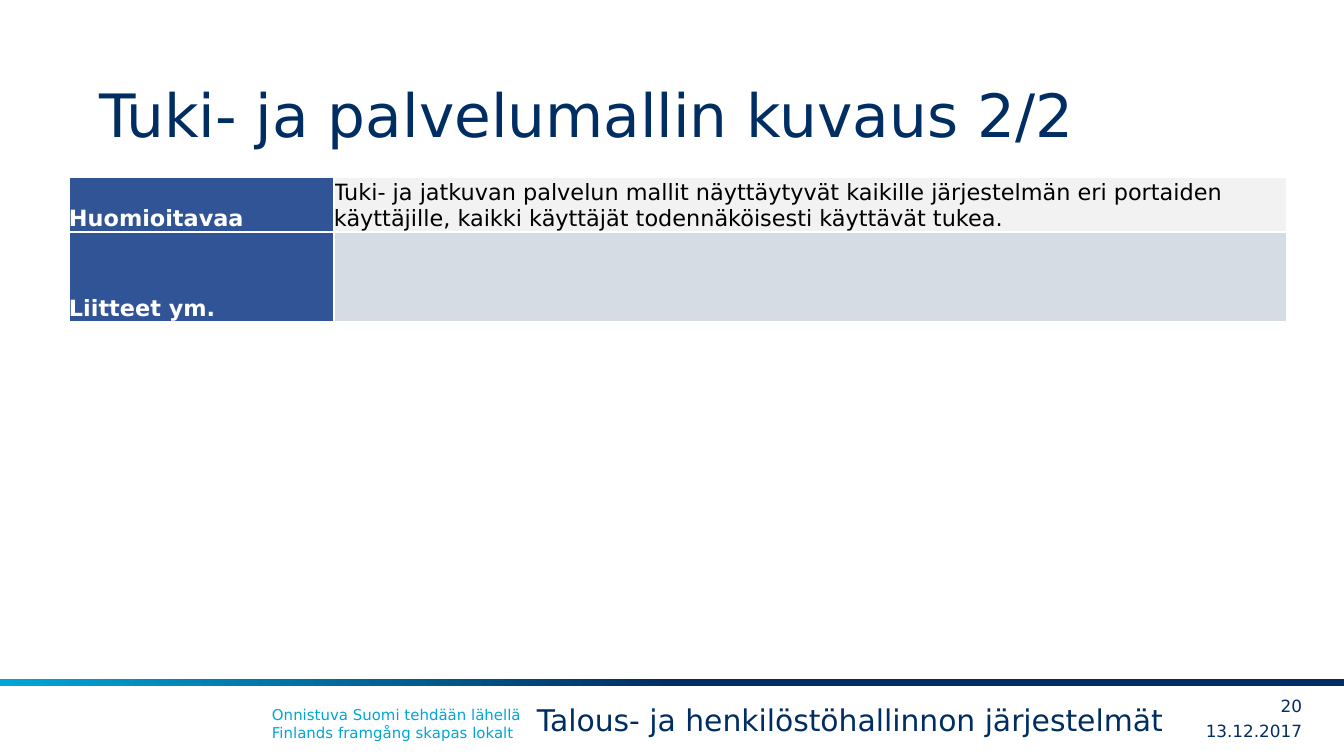
import dataclasses

import lxml.etree
import pptx
import pptx.dml.color
import pptx.enum.shapes
import pptx.enum.text
import pptx.oxml.ns
import pptx.util

EMU_PER_PX = 914400 / 134.4
ANCHOR = pptx.enum.text.MSO_ANCHOR
ALIGN = pptx.enum.text.PP_ALIGN


@dataclasses.dataclass(frozen=True)
class Theme:
    font: str = "DejaVu Sans"
    navy: str = "002E63"
    cyan: str = "00A6D6"
    white: str = "FFFFFF"
    black: str = "000000"
    header_fill: str = "305496"
    row_fills: tuple = ("F2F2F2", "D6DCE4")
    title_size: int = 32
    footer_size: int = 16
    table_size: int = 12
    date_size: int = 9
    tagline_size: int = 8
    border_width: float = 1.5


def px(length):
    return pptx.util.Emu(round(length * EMU_PER_PX))


def rgb(value):
    return pptx.dml.color.RGBColor.from_string(value)


def write_text(frame, text, *, font, size, color, bold=False, align=ALIGN.LEFT):
    paragraph = frame.paragraphs[0]
    paragraph.text = text
    paragraph.alignment = align
    for run in paragraph.runs:
        run.font.name = font
        run.font.size = pptx.util.Pt(size)
        run.font.bold = bold
        run.font.color.rgb = rgb(color)


class SlideBuilder:
    """Draws styled elements on the current slide, with lengths in px."""

    def __init__(self, presentation, theme):
        self.theme = theme
        self.slide = presentation.slides.add_slide(presentation.slide_layouts[5])

    def frame(self, frame, text, size, color, anchor, insets, align=ALIGN.LEFT):
        frame.word_wrap = True
        frame.auto_size = pptx.enum.text.MSO_AUTO_SIZE.NONE
        frame.vertical_anchor = anchor
        frame.margin_left = frame.margin_right = px(insets[0])
        frame.margin_top = frame.margin_bottom = px(insets[1])
        write_text(frame, text, font=self.theme.font, size=size, color=color, align=align)

    def title(self, text, left, top, width, height):
        shape = self.slide.shapes.title
        shape.left, shape.top, shape.width, shape.height = map(px, (left, top, width, height))
        self.frame(shape.text_frame, text, self.theme.title_size, self.theme.navy,
                   ANCHOR.BOTTOM, (0, 7))

    def text(self, text, left, top, width, height, size, color,
             anchor=ANCHOR.TOP, insets=(13, 7), align=ALIGN.LEFT):
        shape = self.slide.shapes.add_textbox(*map(px, (left, top, width, height)))
        self.frame(shape.text_frame, text, size, color, anchor, insets, align)

    def gradient_bar(self, left, top, width, height):
        shape = self.slide.shapes.add_shape(
            pptx.enum.shapes.MSO_SHAPE.RECTANGLE, *map(px, (left, top, width, height)))
        shape.shadow.inherit = False
        shape.line.fill.background()
        shape.fill.gradient()
        shape.fill.gradient_angle = 180
        stops = ((0.5, self.theme.navy), (1, self.theme.cyan))
        for stop, (position, color) in zip(shape.fill.gradient_stops, stops):
            stop.position = position
            stop.color.rgb = rgb(color)

    def cell(self, cell, text, fill, color, bold):
        qn = pptx.oxml.ns.qn
        properties = cell._tc.get_or_add_tcPr()
        for side in ("lnL", "lnR", "lnT", "lnB"):
            line = lxml.etree.SubElement(properties, qn(f"a:{side}"),
                                         w=str(pptx.util.Pt(self.theme.border_width)))
            solid = lxml.etree.SubElement(line, qn("a:solidFill"))
            lxml.etree.SubElement(solid, qn("a:srgbClr"), val=self.theme.white)
        cell.fill.solid()
        cell.fill.fore_color.rgb = rgb(fill)
        cell.margin_left = cell.margin_right = cell.margin_top = cell.margin_bottom = 0
        cell.vertical_anchor = ANCHOR.BOTTOM
        if text:
            write_text(cell.text_frame, text, font=self.theme.font,
                       size=self.theme.table_size, color=color, bold=bold)

    def table(self, rows, left, top, column_widths, row_heights):
        size = (sum(column_widths), sum(row_heights))
        table = self.slide.shapes.add_table(
            len(rows), len(column_widths), *map(px, (left, top, *size))).table
        for column, width in zip(table.columns, column_widths):
            column.width = px(width)
        for row, height, fill, (label, content) in zip(
                table.rows, row_heights, self.theme.row_fills, rows):
            row.height = px(height)
            self.cell(row.cells[0], label, self.theme.header_fill, self.theme.white, True)
            self.cell(row.cells[1], content, fill, self.theme.black, False)


def main():
    presentation = pptx.Presentation()
    presentation.slide_width, presentation.slide_height = px(1344), px(756)
    theme = Theme()
    builder = SlideBuilder(presentation, theme)

    builder.gradient_bar(0, 679, 1344, 7)
    builder.text("Onnistuva Suomi tehdään lähellä\nFinlands framgång skapas lokalt",
                 259, 699, 879, 50, theme.tagline_size, theme.cyan)
    for text, left, top, width in (("13.12.2017", 1169, 716, 133), ("20", 1244, 691, 58)):
        builder.text(text, left, top, width, 30, theme.date_size, theme.navy,
                     anchor=ANCHOR.MIDDLE, insets=(0, 0), align=ALIGN.RIGHT)
    builder.title("Tuki- ja palvelumallin kuvaus 2/2", 99, 31, 1144, 126)
    builder.table(
        [("Huomioitavaa",
          "Tuki- ja jatkuvan palvelun mallit näyttäytyvät kaikille järjestelmän eri portaiden "
          "käyttäjille, kaikki käyttäjät todennäköisesti käyttävät tukea."),
         ("Liitteet ym.", "")],
        69, 177, (265, 953), (55, 90))
    builder.text("Talous- ja henkilöstöhallinnon järjestelmät",
                 524, 695, 672, 50, theme.footer_size, theme.navy)

    presentation.save("out.pptx")


if __name__ == "__main__":
    main()
